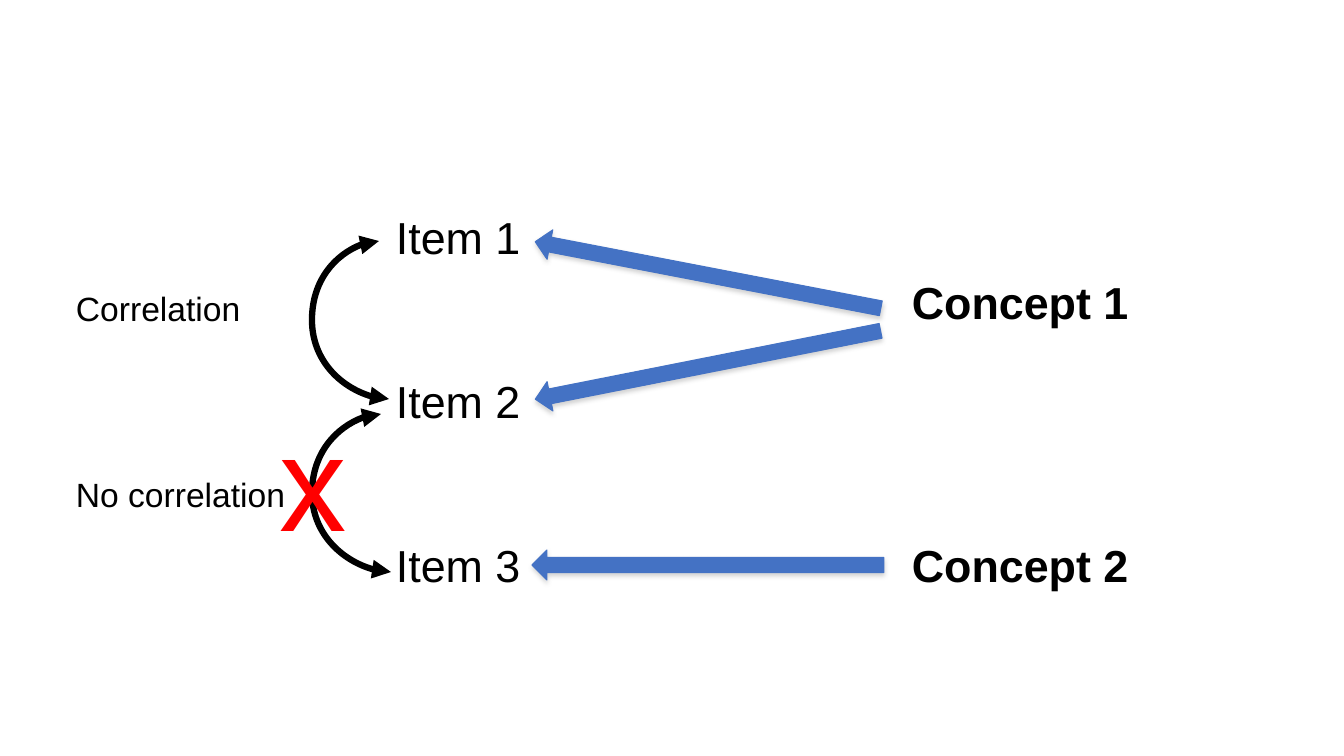
from lxml import etree
from pptx import Presentation
from pptx.dml.color import RGBColor
from pptx.enum.shapes import MSO_CONNECTOR, MSO_SHAPE
from pptx.enum.text import MSO_AUTO_SIZE
from pptx.oxml import parse_xml
from pptx.oxml.ns import nsdecls, qn
from pptx.util import Emu, Pt

BLACK = RGBColor(0x00, 0x00, 0x00)
RED = RGBColor(0xFF, 0x00, 0x00)
BLUE = RGBColor(0x44, 0x72, 0xC4)
PX_PER_INCH = 100.8
ROW_STEP = 164

SOFT_SHADOW = (
    f'<a:effectLst {nsdecls("a")}><a:outerShdw blurRad="40000" dist="23000" '
    'dir="5400000" rotWithShape="0"><a:srgbClr val="808080">'
    '<a:alpha val="35000"/></a:srgbClr></a:outerShdw></a:effectLst>'
)


def px(length):
    return Emu(round(length * 914400 / PX_PER_INCH))


def add_label(slide, text, box, size, color=BLACK, bold=False, wrap=True):
    frame = slide.shapes.add_textbox(*map(px, box)).text_frame
    frame.word_wrap = wrap
    frame.auto_size = MSO_AUTO_SIZE.SHAPE_TO_FIT_TEXT
    paragraph = frame.paragraphs[0]
    paragraph.text = text
    font = paragraph.font
    font.name, font.size, font.bold = "Arial", Pt(size), bold
    font.color.rgb = color


def add_block_arrow(slide, center_x, center_y, rotation):
    width, height = 352, 30
    arrow = slide.shapes.add_shape(
        MSO_SHAPE.RIGHT_ARROW, px(center_x - width / 2),
        px(center_y - height / 2), px(width), px(height))
    arrow.rotation = rotation
    arrow.fill.solid()
    arrow.fill.fore_color.rgb = BLUE
    arrow.line.color.rgb = BLUE
    arrow.line.width = Pt(0.75)
    arrow._element.spPr.append(parse_xml(SOFT_SHADOW))


def add_link(slide, x, y, bulge_x):
    """Curved two-headed arrow that swings left as far as bulge_x."""
    width, height = 10, 158
    link = slide.shapes.add_connector(
        MSO_CONNECTOR.CURVE, px(x), px(y), px(x + width), px(y + height))
    link.line.color.rgb = BLACK
    link.line.width = Pt(4.5)
    properties = link._element.spPr
    bend = round((bulge_x - x) / width * 100000)
    etree.SubElement(properties.find(f'.//{qn("a:avLst")}'), qn("a:gd"),
                     name="adj1", fmla=f"val {bend}")
    for end in ("a:headEnd", "a:tailEnd"):
        etree.SubElement(link.line._get_or_add_ln(), qn(end), type="triangle")
    etree.SubElement(properties, qn("a:effectLst"))


def add_concepts(slide, left, tops):
    for number, top in enumerate(tops, 1):
        add_label(slide, f"Concept {number}", (left, top, 269, 65), 32, bold=True)


def add_items(slide, left, top):
    for row in range(3):
        add_label(slide, f"Item {row + 1}",
                  (left, top + row * ROW_STEP, 159, 65), 32)


def add_correlations(slide, left):
    add_label(slide, "Correlation", (left, 283, 186, 50), 24, wrap=False)
    add_label(slide, "No correlation", (left, 469, 232, 50), 24, wrap=False)
    for x, y in ((379, 241), (381, 414)):
        add_link(slide, x, y, left + 246)
    # Cross over the missing correlation
    add_label(slide, "x", (left + 204, 392, 93, 173), 96, RED)


def main():
    deck = Presentation()
    deck.slide_width, deck.slide_height = px(1344), px(756)
    slide = deck.slides.add_slide(deck.slide_layouts[6])

    add_concepts(slide, 902, (270, 533))
    add_items(slide, 386, 205)
    # Concepts point to their items
    for center_y, rotation in ((275, 190.9), (365, 168.8), (565, 180)):
        add_block_arrow(slide, 708, center_y, rotation)
    add_correlations(slide, 66)

    deck.save("out.pptx")


if __name__ == "__main__":
    main()
